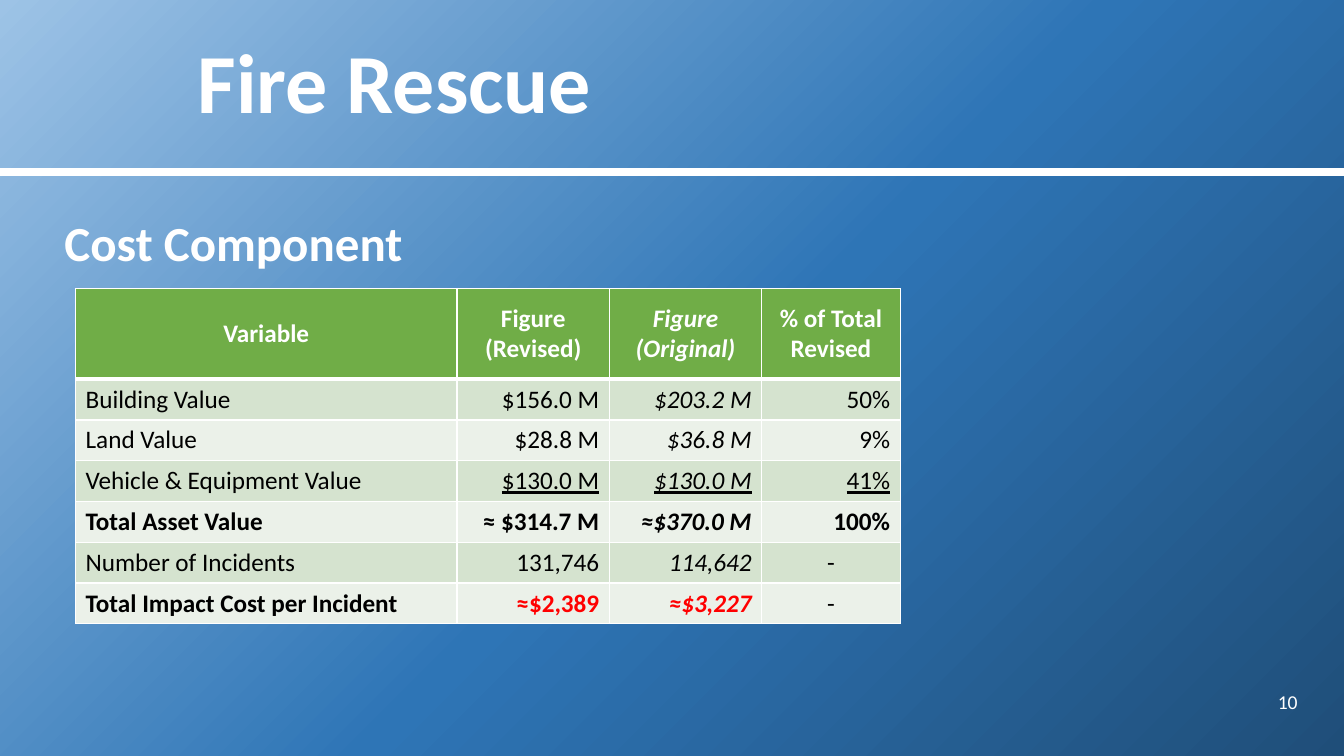
from dataclasses import dataclass

from lxml.etree import SubElement
from pptx import Presentation
from pptx.dml.color import RGBColor
from pptx.enum.shapes import MSO_CONNECTOR
from pptx.enum.text import MSO_ANCHOR, PP_ALIGN
from pptx.oxml import parse_xml
from pptx.oxml.ns import nsdecls, qn
from pptx.util import Pt

TITLE = "Fire Rescue"
HEADING = "Cost Component"
PAGE_NUMBER = "10"
HEADER = ("Variable", "Figure (Revised)", "Figure (Original)", "% of Total Revised")
ROWS = [
    ("Building Value", "$156.0 M", "$203.2 M", "50%"),
    ("Land Value", "$28.8 M", "$36.8 M", "9%"),
    ("Vehicle & Equipment Value", "$130.0 M", "$130.0 M", "41%"),
    ("Total Asset Value", "≈ $314.7 M", "≈$370.0 M", "100%"),
    ("Number of Incidents", "131,746", "114,642", "-"),
    ("Total Impact Cost per Incident", "≈$2,389", "≈$3,227", "-"),
]
ORIGINAL_COLUMN = 2
SUMMED_ROW, TOTAL_ROW, IMPACT_ROW = 3, 4, 6

COLUMN_WIDTHS = (272.5, 108.8, 108.8, 98.9)
HEADER_HEIGHT, ROW_HEIGHT = 64.8, 29.15


@dataclass(frozen=True)
class Theme:
    font: str = "Calibri"
    white: str = "FFFFFF"
    black: str = "000000"
    red: str = "FF0000"
    header: str = "70AD47"
    bands: tuple = ("EBF1E9", "D5E3CF")
    background: tuple = ((0, "9DC3E6"), (53, "2E75B6"), (100, "1F4E79"))
    title_size: int = 60
    heading_size: int = 35
    table_size: int = 18
    number_size: int = 14


THEME = Theme()


def paint_background(page):
    """Fill the page with a gradient that starts in the top left corner."""
    page.background.fill.solid()
    stops = "".join(
        f'<a:gs pos="{place * 1000}"><a:srgbClr val="{color}"/></a:gs>'
        for place, color in THEME.background
    )
    gradient = parse_xml(
        f'<a:gradFill {nsdecls("a")} rotWithShape="1"><a:gsLst>{stops}</a:gsLst>'
        '<a:path path="circle"><a:fillToRect r="100000" b="100000"/></a:path></a:gradFill>'
    )
    solid = page.background._cSld.find(".//" + qn("a:solidFill"))
    solid.getparent().replace(solid, gradient)


def write(frame, text, size, color, align=PP_ALIGN.LEFT, bold=False, italic=False, underline=False):
    para = frame.paragraphs[0]
    para.alignment = align
    span = para.add_run()
    span.text = text
    font = span.font
    font.name, font.size = THEME.font, Pt(size)
    font.bold, font.italic, font.underline = bold, italic, underline
    font.color.rgb = RGBColor.from_string(color)
    return para


def add_title(page):
    title = page.shapes.title
    title.left, title.top, title.width, title.height = Pt(134), Pt(0), Pt(799), Pt(123)
    frame = title.text_frame
    frame.word_wrap = True
    frame.vertical_anchor = MSO_ANCHOR.MIDDLE
    para = write(frame, TITLE, THEME.title_size, THEME.white, bold=True)
    para.line_spacing = 0.9
    shadow = parse_xml(
        f'<a:effectLst {nsdecls("a")}><a:outerShdw blurRad="38100" dist="38100" dir="2700000" '
        'algn="tl"><a:srgbClr val="000000"><a:alpha val="43000"/></a:srgbClr></a:outerShdw></a:effectLst>'
    )
    para.runs[0].font._element.find(qn("a:solidFill")).addnext(shadow)


def add_rule(page, width):
    rule = page.shapes.add_connector(MSO_CONNECTOR.STRAIGHT, Pt(0), Pt(123), width, Pt(123))
    rule.line.width = Pt(6)
    rule.line.color.rgb = RGBColor.from_string(THEME.white)
    SubElement(rule._element.spPr, qn("a:effectLst"))


def add_text(page, place, text, size, anchor, **style):
    box = page.shapes.add_textbox(*map(Pt, place))
    box.text_frame.word_wrap = True
    box.text_frame.vertical_anchor = anchor
    return write(box.text_frame, text, size, THEME.white, **style)


def border_cell(cell, top, bottom):
    widths = {"lnL": 1, "lnR": 1, "lnT": top, "lnB": bottom}
    properties = cell._tc.get_or_add_tcPr()
    for index, (side, width) in enumerate(widths.items()):
        properties.insert(index, parse_xml(
            f'<a:{side} {nsdecls("a")} w="{Pt(width)}"><a:solidFill>'
            f'<a:srgbClr val="{THEME.white}"/></a:solidFill></a:{side}>'
        ))


def cell_style(row, column, text):
    """Choose colour, alignment and emphasis from the cell's place in the table."""
    header = row == 0
    if header or text == "-":
        align = PP_ALIGN.CENTER
    else:
        align = PP_ALIGN.RIGHT if column else PP_ALIGN.LEFT
    color = THEME.white if header else THEME.black
    if row == IMPACT_ROW and column in (1, ORIGINAL_COLUMN):
        color = THEME.red
    return {
        "color": color,
        "align": align,
        "bold": row in (0, TOTAL_ROW, IMPACT_ROW) and text != "-",
        "italic": column == ORIGINAL_COLUMN,
        "underline": row == SUMMED_ROW and column > 0,
    }


def add_cost_table(page):
    height = HEADER_HEIGHT + ROW_HEIGHT * len(ROWS)
    table = page.shapes.add_table(
        len(ROWS) + 1, len(HEADER), Pt(54), Pt(206), Pt(sum(COLUMN_WIDTHS)), Pt(height)
    ).table
    table.horz_banding = False
    for column, width in zip(table.columns, COLUMN_WIDTHS):
        column.width = Pt(width)
    for row, texts in enumerate([HEADER, *ROWS]):
        table.rows[row].height = Pt(ROW_HEIGHT if row else HEADER_HEIGHT)
        for column, text in enumerate(texts):
            cell = table.cell(row, column)
            cell.vertical_anchor = MSO_ANCHOR.TOP if row else MSO_ANCHOR.MIDDLE
            cell.fill.solid()
            fill = THEME.bands[row % 2] if row else THEME.header
            cell.fill.fore_color.rgb = RGBColor.from_string(fill)
            border_cell(cell, top=3 if row == 1 else 1, bottom=1 if row else 3)
            write(cell.text_frame, text, THEME.table_size, **cell_style(row, column, text))


def main():
    deck = Presentation()
    deck.slide_width, deck.slide_height = Pt(960), Pt(540)
    page = deck.slides.add_slide(deck.slide_layouts[5])
    paint_background(page)
    add_rule(page, deck.slide_width)
    add_title(page)
    add_text(page, (870, 487, 64, 29), PAGE_NUMBER, THEME.number_size,
             MSO_ANCHOR.MIDDLE, align=PP_ALIGN.RIGHT)
    heading = add_text(page, (39, 140, 894, 60), HEADING, THEME.heading_size,
                       MSO_ANCHOR.TOP, bold=True)
    heading.line_spacing = 1.2
    add_cost_table(page)
    deck.save("out.pptx")


if __name__ == "__main__":
    main()
